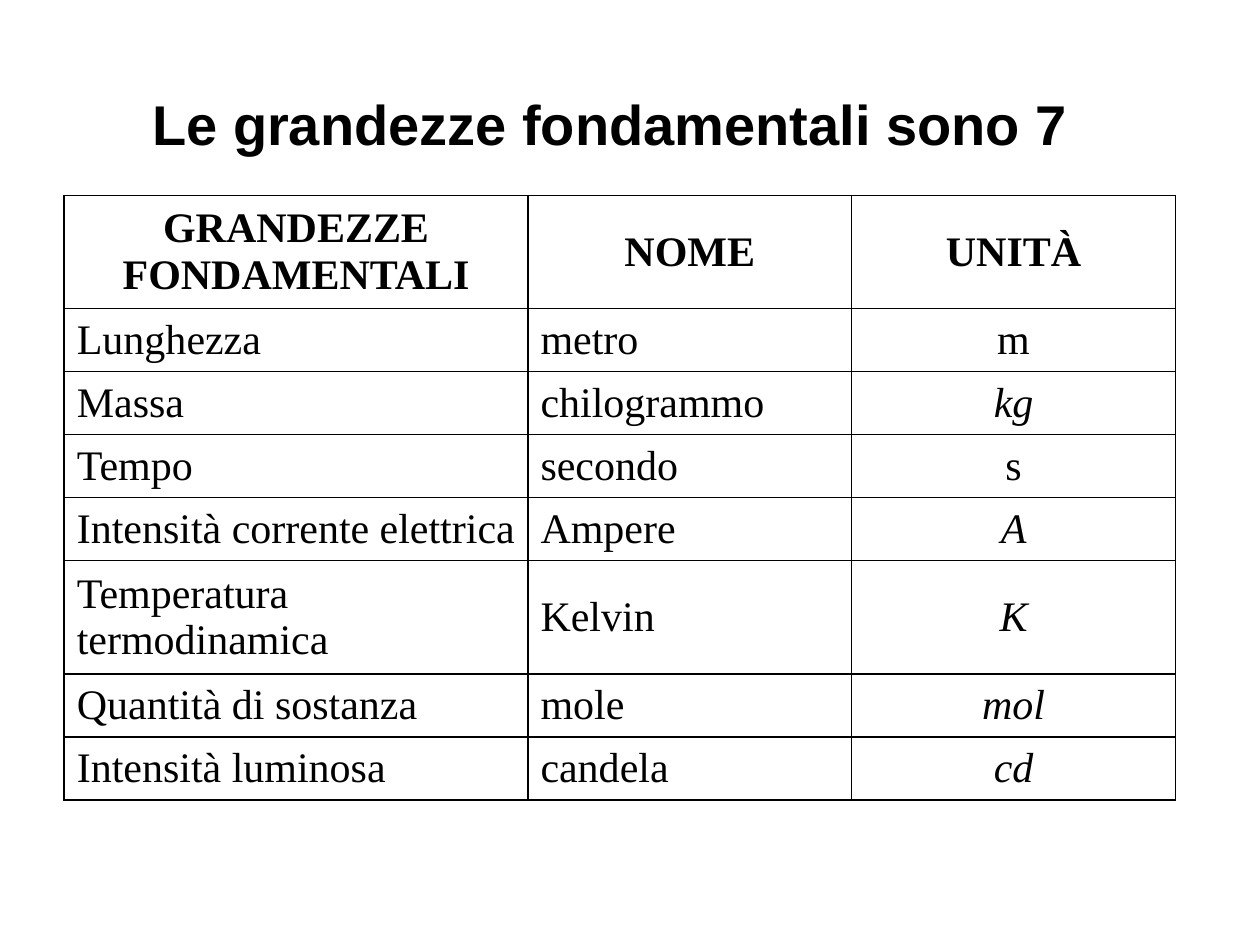
import pptx
import pptx.dml.color
import pptx.enum.text
import pptx.oxml
import pptx.oxml.ns
import pptx.util
from pptx.util import Inches

TITLE = "Le grandezze fondamentali sono 7"
HEADERS = ("GRANDEZZE FONDAMENTALI", "NOME", "UNITÀ")
QUANTITIES = [
    ("Lunghezza", "metro", "m"),
    ("Massa", "chilogrammo", "kg"),
    ("Tempo", "secondo", "s"),
    ("Intensità corrente elettrica", "Ampere", "A"),
    ("Temperatura termodinamica", "Kelvin", "K"),
    ("Quantità di sostanza", "mole", "mol"),
    ("Intensità luminosa", "candela", "cd"),
]
UPRIGHT_UNITS = ("m", "s")
COLUMN_WIDTHS = (3.68, 2.57, 2.57)
ROW_HEIGHT, TALL_ROW_HEIGHT = 0.5, 0.9
TALL_ROWS = (0, 5)
UNIT_COLUMN = 2
BLACK, WHITE = "000000", "FFFFFF"


def color(value):
    return pptx.dml.color.RGBColor.from_string(value)


def add_run(paragraph, text, font_name, size, bold=False, italic=False):
    run = paragraph.add_run()
    run.text = text
    run.font.name = font_name
    run.font.size = pptx.util.Pt(size)
    run.font.bold = bold
    run.font.italic = italic
    run.font.color.rgb = color(BLACK)


def add_borders(cell):
    """Draw a 1 pt black line on all four sides; lines precede the fill in the XML."""
    properties = cell._tc.get_or_add_tcPr()
    for index, side in enumerate("LRTB"):
        properties.insert(index, pptx.oxml.parse_xml(
            f'<a:ln{side} {pptx.oxml.ns.nsdecls("a")} w="{pptx.util.Pt(1)}">'
            f'<a:solidFill><a:srgbClr val="{BLACK}"/></a:solidFill></a:ln{side}>'))


def add_title(slide):
    box = slide.shapes.add_textbox(Inches(1.11), Inches(0.66), Inches(7.53), Inches(0.64))
    frame = box.text_frame
    frame.word_wrap = False
    frame.auto_size = pptx.enum.text.MSO_AUTO_SIZE.SHAPE_TO_FIT_TEXT
    add_run(frame.paragraphs[0], TITLE, "Arial", 32, bold=True)


def add_quantity_table(slide):
    rows = [HEADERS] + QUANTITIES
    heights = [TALL_ROW_HEIGHT if index in TALL_ROWS else ROW_HEIGHT
               for index in range(len(rows))]
    table = slide.shapes.add_table(
        len(rows), len(HEADERS), Inches(0.51), Inches(1.55),
        Inches(sum(COLUMN_WIDTHS)), Inches(sum(heights))).table
    table.horz_banding = False
    for column, width in zip(table.columns, COLUMN_WIDTHS):
        column.width = Inches(width)
    for row_index, (texts, height) in enumerate(zip(rows, heights)):
        table.rows[row_index].height = Inches(height)
        is_header = row_index == 0
        for column_index, text in enumerate(texts):
            is_unit = column_index == UNIT_COLUMN
            cell = table.cell(row_index, column_index)
            cell.vertical_anchor = pptx.enum.text.MSO_ANCHOR.MIDDLE
            cell.fill.solid()
            cell.fill.fore_color.rgb = color(WHITE)
            add_borders(cell)
            paragraph = cell.text_frame.paragraphs[0]
            if is_header or is_unit:
                paragraph.alignment = pptx.enum.text.PP_ALIGN.CENTER
            italic = is_unit and not is_header and text not in UPRIGHT_UNITS
            add_run(paragraph, text, "Times New Roman", 24, is_header, italic)


def main():
    presentation = pptx.Presentation()
    presentation.slide_width = Inches(10)
    presentation.slide_height = Inches(7.5)
    slide = presentation.slides.add_slide(presentation.slide_layouts[6])
    add_quantity_table(slide)
    add_title(slide)
    presentation.save("out.pptx")


if __name__ == "__main__":
    main()
